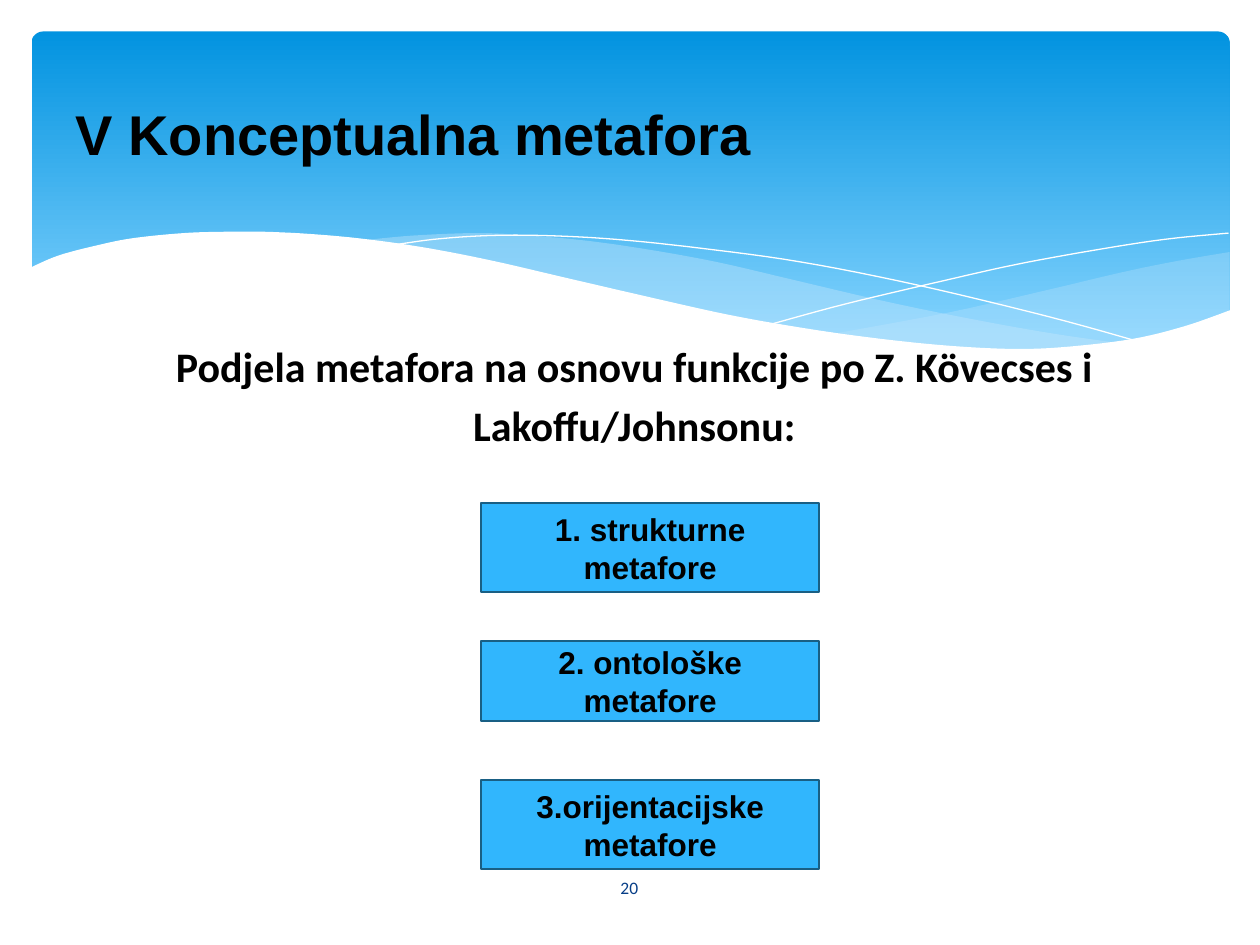
"""Build the slide on the three kinds of conceptual metaphor."""
from lxml import etree
from pptx import Presentation
from pptx.dml.color import RGBColor as RGB
from pptx.enum.shapes import MSO_SHAPE as SHAPE
from pptx.enum.text import MSO_ANCHOR as ANCHOR, PP_ALIGN as ALIGN
from pptx.oxml.ns import qn
from pptx.util import Inches, Pt

BLACK = RGB(0x00, 0x00, 0x00)
WHITE = RGB(0xFF, 0xFF, 0xFF)
DEEP = RGB(0x02, 0x93, 0xE0)
LIGHT = RGB(0x83, 0xD3, 0xFE)
PALE = RGB(0xC6, 0xE7, 0xFC)
SKY = RGB(0x31, 0xB6, 0xFD)
EDGE = RGB(0x19, 0x5F, 0x84)
NAVY = RGB(0x07, 0x3E, 0x87)


def smooth(knots, steps=6):
    """Return a Catmull-Rom curve through the knots."""
    ends = [knots[0], *knots, knots[-1]]
    curve = [knots[0]]
    for a, b, c, d in zip(ends, ends[1:], ends[2:], ends[3:]):
        for step in range(1, steps + 1):
            t = step / steps
            curve.append(tuple(
                (2 * q + (r - p) * t + (2 * p - 5 * q + 4 * r - s) * t ** 2
                 + (3 * q - p - 3 * r + s) * t ** 3) / 2
                for p, q, r, s in zip(a, b, c, d)))
    return curve


def style(para, name, size, color, bold=True, align=ALIGN.CENTER):
    """Set the font and alignment of a paragraph."""
    para.alignment = align
    font = para.font
    font.name, font.size, font.bold = name, Pt(size), bold
    font.color.rgb = color


deck = Presentation()
deck.slide_width, deck.slide_height = Inches(10), Inches(7.5)
slide = deck.slides.add_slide(deck.slide_layouts[1])
shapes = slide.shapes
title, body = slide.placeholders

band = shapes.add_shape(SHAPE.ROUNDED_RECTANGLE, Inches(0.25), Inches(0.25),
                        Inches(9.51), Inches(2.7))
band.adjustments[0] = 0.034
band.shadow.inherit = False
band.line.fill.background()
band.fill.gradient()
band.fill.gradient_angle = 270
for stop, color, place in zip(band.fill.gradient_stops, (DEEP, LIGHT), (0, 0.9)):
    stop.color.rgb, stop.position = color, place

right = (smooth([(9.76, 2), (9.35, 2.07), (8.91, 2.16), (8.32, 2.3),
                 (7.53, 2.48), (6.61, 2.65)])
         + smooth([(6.61, 2.65), (7.05, 2.71), (7.57, 2.76), (8.03, 2.78),
                   (8.54, 2.76), (8.97, 2.7), (9.35, 2.62), (9.76, 2.47)]))
left = (smooth([(8.93, 2.73), (8.37, 2.65), (7.75, 2.54), (7.06, 2.4),
                (6.29, 2.22), (5.69, 2.08), (5.14, 1.98), (4.65, 1.91),
                (4.2, 1.87), (3.8, 1.85), (3.28, 1.87), (2.86, 1.91)])
        + smooth([(2.86, 1.91), (3.42, 1.99), (4.04, 2.11), (4.49, 2.22),
                  (5.3, 2.4), (6.01, 2.55), (6.65, 2.66), (7.22, 2.74),
                  (7.73, 2.77), (8.18, 2.78), (8.57, 2.77), (8.93, 2.73)]))
fall = smooth([(3.09, 1.95), (3.44, 1.9), (3.87, 1.87), (4.33, 1.87),
               (4.89, 1.9), (5.56, 1.97), (6.36, 2.08), (7.27, 2.26),
               (8.31, 2.51), (9.07, 2.72)])
rise = smooth([(6.13, 2.57), (6.72, 2.41), (7.48, 2.23), (8.06, 2.1),
               (8.66, 1.99), (9.24, 1.9), (9.75, 1.85)])
cover = smooth([(9.77, 2.46), (9.4, 2.59), (8.99, 2.69), (8.5, 2.75),
                (8.09, 2.77), (7.61, 2.75), (7.08, 2.7), (6.48, 2.62),
                (5.79, 2.5), (5.03, 2.33), (4.47, 2.2), (3.91, 2.07),
                (3.4, 1.97), (2.92, 1.9), (2.5, 1.86), (2.11, 1.84),
                (1.77, 1.84), (1.46, 1.85), (1.06, 1.89), (0.76, 1.95),
                (0.46, 2.03), (0.23, 2.13)]) + [(0.23, 3.29), (9.77, 3.29)]

for points, color, alpha in ((right, PALE, 29), (left, PALE, 40),
                             (fall, None, 0), (rise, None, 0),
                             (cover, WHITE, 100)):
    start, *rest = [(Inches(x), Inches(y)) for x, y in points]
    path = shapes.build_freeform(*start)
    path.add_line_segments(rest, close=color is not None)
    wave = path.convert_to_shape()
    wave.shadow.inherit = False
    if color is None:
        wave.fill.background()
        wave.line.color.rgb, wave.line.width = WHITE, Pt(0)
        continue
    wave.line.fill.background()
    wave.fill.solid()
    wave.fill.fore_color.rgb = color
    if alpha < 100:
        tint = wave.element.spPr.find(qn("a:solidFill"))[0]
        etree.SubElement(tint, qn("a:alpha"), val=str(alpha * 1000))

shapes.element.append(body.element)
body.left, body.top = Inches(0.35), Inches(2.65)
body.width, body.height = Inches(9.37), Inches(4.68)
body.text_frame.text = ("Podjela metafora na osnovu funkcije po Z. Kövecses i\n"
                        "Lakoffu/Johnsonu:")
for para in body.text_frame.paragraphs:
    style(para, "Calibri", 24, BLACK)
    props = para._p.get_or_add_pPr()
    props.set("marL", "0")
    props.set("indent", "0")
    props.insert_element_before(etree.Element(qn("a:buNone")),
                                "a:tabLst", "a:defRPr", "a:extLst")

page = shapes.add_textbox(Inches(4.36), Inches(6.84), Inches(1.27), Inches(0.4))
page.text_frame.word_wrap = True
page.text_frame.vertical_anchor = ANCHOR.MIDDLE
page.text_frame.text = "20"
style(page.text_frame.paragraphs[0], "Calibri", 10, NAVY, bold=False)

shapes.element.append(title.element)
title.left, title.top = Inches(0.5), Inches(0.37)
title.width, title.height = Inches(9), Inches(1.37)
title.text_frame.vertical_anchor = ANCHOR.MIDDLE
title.text_frame.text = "V Konceptualna metafora"
style(title.text_frame.paragraphs[0], "Arial", 32, BLACK, align=ALIGN.LEFT)

kinds = (("1. strukturne metafore", 0.71), ("2. ontološke metafore", 0.63),
         ("3.orijentacijske metafore", 0.71))
for row, (text, tall) in enumerate(kinds):
    box = shapes.add_shape(SHAPE.RECTANGLE, Inches(3.82), Inches(3.99 + 1.1 * row),
                           Inches(2.68), Inches(tall))
    box.shadow.inherit = False
    box.fill.solid()
    box.fill.fore_color.rgb = SKY
    box.line.color.rgb, box.line.width = EDGE, Pt(1.25)
    box.text_frame.word_wrap = True
    box.text_frame.vertical_anchor = ANCHOR.MIDDLE
    box.text_frame.text = text
    style(box.text_frame.paragraphs[0], "Arial", 18, BLACK)

deck.save("out.pptx")
